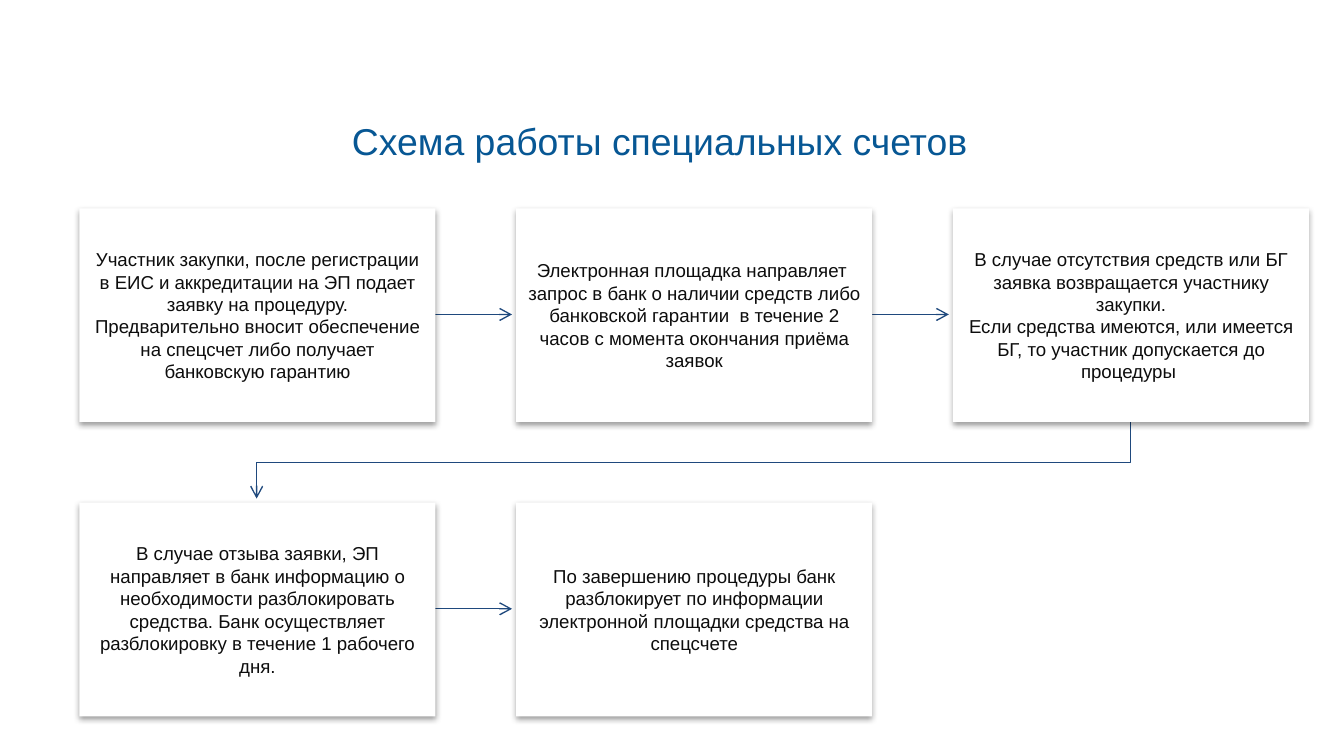
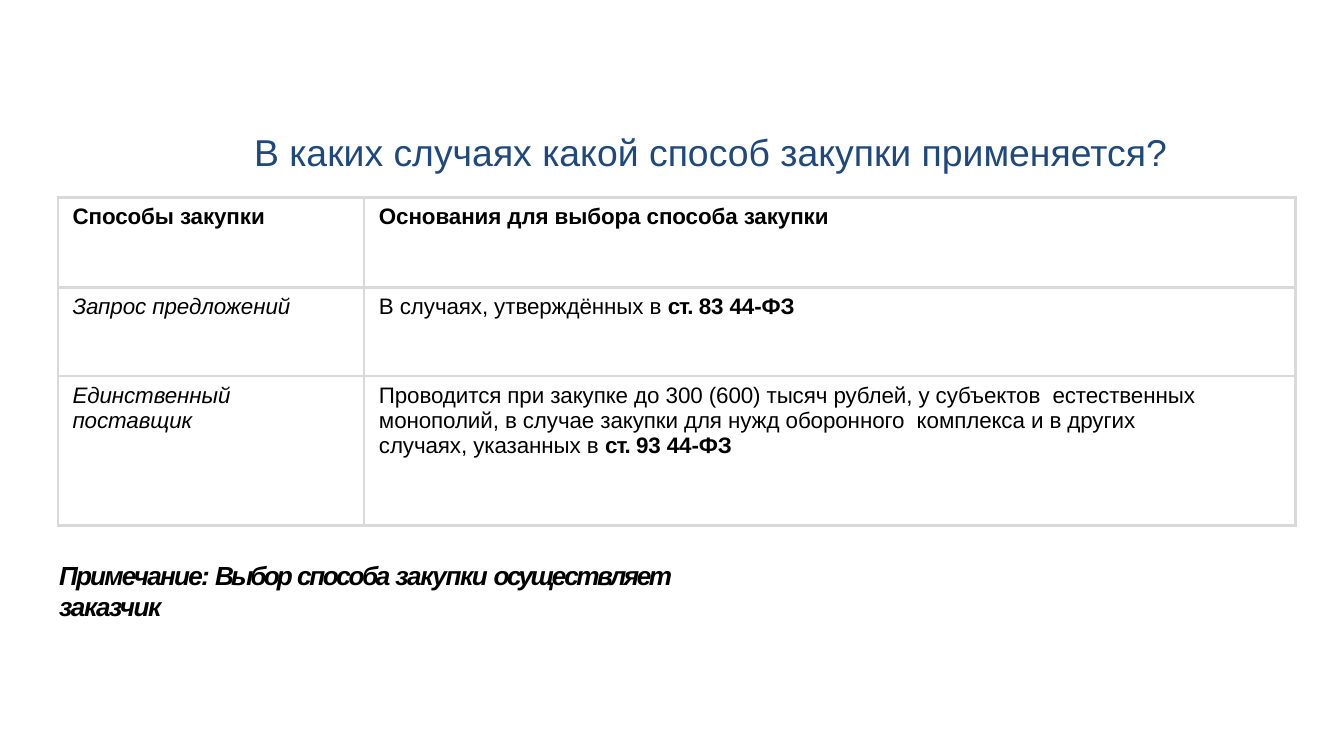
from dataclasses import dataclass

from lxml.etree import SubElement
from pptx import Presentation
from pptx.dml.color import RGBColor
from pptx.enum.shapes import MSO_CONNECTOR, MSO_SHAPE
from pptx.enum.text import MSO_ANCHOR, MSO_AUTO_SIZE, PP_ALIGN
from pptx.oxml import parse_xml
from pptx.oxml.ns import nsdecls, qn
from pptx.util import Pt

PX = 9144  # 100 px to the inch


@dataclass(frozen=True)
class Theme:
    font: str = "Arial"
    title: str = "075794"
    accent: str = "1F497D"
    box_text: str = "0D0D0D"
    text: str = "000000"
    paper: str = "FFFFFF"
    grid: str = "D9D9D9"
    title_size: int = 20
    box_size: int = 10
    table_size: int = 12
    note_size: int = 14
    line_width: float = 0.75
    grid_width: float = 1.5


def px(*values):
    return [v * PX for v in values]


def rgb(color):
    return RGBColor.from_string(color)


def write(tf, paragraphs, size, color, font, align=PP_ALIGN.LEFT,
          bold=False, italic=False, spacing=0):
    """Each paragraph is a string or a list of (text, format changes) runs."""
    for i, runs in enumerate(paragraphs):
        p = tf.add_paragraph() if i else tf.paragraphs[0]
        p.alignment = align
        for text, change in [(runs, {})] if isinstance(runs, str) else runs:
            r = p.add_run()
            r.text = text
            r.font.name, r.font.size = font, Pt(size)
            r.font.color.rgb = rgb(color)
            r.font.bold = change.get("bold", bold)
            r.font.italic = change.get("italic", italic)
            spc = change.get("spacing", spacing)
            if spc:
                r.font._element.set("spc", str(round(spc * 100)))


class Deck:
    def __init__(self, theme):
        self.theme = theme
        self.prs = Presentation()
        self.prs.slide_width = 1000 * PX
        self.prs.slide_height = self.prs.slide_width * 9 // 16
        self.s = None

    def frame(self, sp, margins, anchor=MSO_ANCHOR.MIDDLE):
        tf = sp.text_frame
        tf.word_wrap = True
        tf.auto_size = MSO_AUTO_SIZE.NONE
        tf.vertical_anchor = anchor
        tf.margin_left, tf.margin_top, tf.margin_right, tf.margin_bottom = px(*margins)
        return tf

    def slide(self, title, box, color, margins):
        self.s = self.prs.slides.add_slide(self.prs.slide_layouts[5])
        sp = self.s.shapes.title
        sp.left, sp.top, sp.width, sp.height = px(*box)
        write(self.frame(sp, margins), [title], self.theme.title_size, color,
              self.theme.font, PP_ALIGN.CENTER)

    def line_style(self, sp):
        sp.line.color.rgb = rgb(self.theme.accent)
        sp.line.width = Pt(self.theme.line_width)
        SubElement(sp.line._get_or_add_ln(), qn("a:tailEnd"), type="arrow")

    def arrow(self, x1, y1, x2, y2):
        sp = self.s.shapes.add_connector(MSO_CONNECTOR.STRAIGHT, *px(x1, y1, x2, y2))
        self.line_style(sp)
        SubElement(sp._element.spPr, qn("a:effectLst"))

    def bent_arrow(self, start, *points):
        builder = self.s.shapes.build_freeform(*px(*start))
        builder.add_line_segments([px(*pt) for pt in points], close=False)
        sp = builder.convert_to_shape()
        sp.fill.background()
        self.line_style(sp)
        sp.shadow.inherit = False

    def card(self, x, y, w, h, paragraphs):
        sp = self.s.shapes.add_shape(MSO_SHAPE.RECTANGLE, *px(x, y, w, h))
        sp.fill.solid()
        sp.fill.fore_color.rgb = rgb(self.theme.paper)
        sp.line.fill.background()
        sp.shadow.inherit = False
        effects = sp._element.spPr.find(qn("a:effectLst"))
        effects.append(parse_xml(
            f'<a:outerShdw {nsdecls("a")} blurRad="{Pt(3.1)}" dist="{Pt(1.6)}" dir="5400000" '
            'rotWithShape="0"><a:srgbClr val="000000"><a:alpha val="38000"/></a:srgbClr>'
            '</a:outerShdw>'))
        write(self.frame(sp, (8, 8, 8, 8)), paragraphs, self.theme.box_size,
              self.theme.box_text, self.theme.font, PP_ALIGN.CENTER)

    def table(self, x, y, widths, heights, right_margins, rows):
        t = self.s.shapes.add_table(len(rows), len(widths),
                                    *px(x, y, sum(widths), sum(heights))).table
        t.first_row = t.horz_banding = False
        for col, w in zip(t.columns, widths):
            col.width = w * PX
        for row, h, texts in zip(t.rows, heights, rows):
            row.height = h * PX
            for cell, right, (paragraphs, style) in zip(row.cells, right_margins, texts):
                self.cell(cell, right, paragraphs, style)

    def cell(self, cell, right, paragraphs, style):
        cell.margin_left, cell.margin_top, cell.margin_right, cell.margin_bottom = px(
            11, 5, right, 0)
        cell.fill.solid()
        cell.fill.fore_color.rgb = rgb(self.theme.paper)
        tc_pr = cell._tc.get_or_add_tcPr()
        for i, side in enumerate("LRTB"):
            tc_pr.insert(i, parse_xml(
                f'<a:ln{side} {nsdecls("a")} w="{Pt(self.theme.grid_width)}"><a:solidFill>'
                f'<a:srgbClr val="{self.theme.grid}"/></a:solidFill></a:ln{side}>'))
        write(cell.text_frame, paragraphs, self.theme.table_size, self.theme.text,
              self.theme.font, spacing=-0.05, **style)

    def note(self, x, y, w, h, runs):
        sp = self.s.shapes.add_textbox(*px(x, y, w, h))
        write(self.frame(sp, (1, 1, 0, 0), MSO_ANCHOR.TOP), [runs], self.theme.note_size,
              self.theme.text, self.theme.font, bold=True, italic=True)


STEPS = [
    ["Участник закупки, после регистрации в ЕИС и аккредитации на ЭП подает заявку на процедуру.",
     "Предварительно вносит обеспечение на спецсчет либо получает банковскую гарантию"],
    ["Электронная площадка направляет  запрос в банк о наличии средств либо банковской гарантии  "
     "в течение 2 часов с момента окончания приёма заявок"],
    ["В случае отсутствия средств или БГ заявка возвращается участнику закупки.",
     "Если средства имеются, или имеется БГ, то участник допускается до процедуры "],
    ["В случае отзыва заявки, ЭП направляет в банк информацию о необходимости разблокировать "
     "средства. Банк осуществляет разблокировку в течение 1 рабочего дня."],
    ["По завершению процедуры банк разблокирует по информации электронной площадки средства "
     "на спецсчете"],
]


def accounts_slide(deck):
    deck.slide("Схема работы специальных счетов", (20, 69, 942, 71), deck.theme.title,
               (10, 5, 10, 5))
    # Grid of steps, three to a row
    columns, left, top, w, h, step_x, step_y = 3, 59, 155, 265, 159, 325, 219
    spots = [(left + i % columns * step_x, top + i // columns * step_y)
             for i in range(len(STEPS))]
    # Arrows lie under the cards
    for (x, y), (next_x, next_y) in zip(spots, spots[1:]):
        if next_y == y:
            deck.arrow(x + w, y + h // 2, next_x - 3, y + h // 2)
        else:
            start_x, end_x = x + w // 2, next_x + w // 2
            middle = (y + h + next_y) // 2
            deck.bent_arrow((start_x, y + h), (start_x, middle), (end_x, middle),
                            (end_x, next_y - 3))
    for (x, y), paragraphs in zip(spots, STEPS):
        deck.card(x, y, w, h, paragraphs)


def methods_slide(deck):
    deck.slide("В каких случаях какой способ закупки применяется?", (76, 95, 905, 35),
               deck.theme.accent, (1, 1, 0, 0))
    # Methods and their grounds
    head, method, plain = {"bold": True}, {"italic": True}, {}
    article = ("ст. ", {"bold": True, "spacing": -0.5})
    deck.table(43, 147, (228, 693), (67, 66, 111), (0, 60), [
        [(["Способы закупки"], head), (["Основания для выбора способа закупки"], head)],
        [(["Запрос предложений"], method),
         ([[("В случаях, утверждённых в ", {}), article, ("83 44-ФЗ", head)]], plain)],
        [(["Единственный", "поставщик"], method),
         ([[("Проводится при закупке до 300 (600) тысяч рублей, у субъектов  естественных "
             "монополий, в случае закупки для нужд оборонного  комплекса и в других случаях, "
             "указанных в ", {}), article, ("93 44-ФЗ", head)]], plain)],
    ])
    # Closing note with tight letter spacing
    words = [("Примечание: ", -1), ("Выбор ", -1.6), ("способа ", -1.3), ("закупки ", -0.8),
             ("осуществляет ", -1.4), ("заказчик", -0.8)]
    deck.note(43, 415, 534, 25, [(text, {"spacing": spc}) for text, spc in words])


def main():
    deck = Deck(Theme())
    accounts_slide(deck)
    methods_slide(deck)
    deck.prs.save("out.pptx")


if __name__ == "__main__":
    main()
